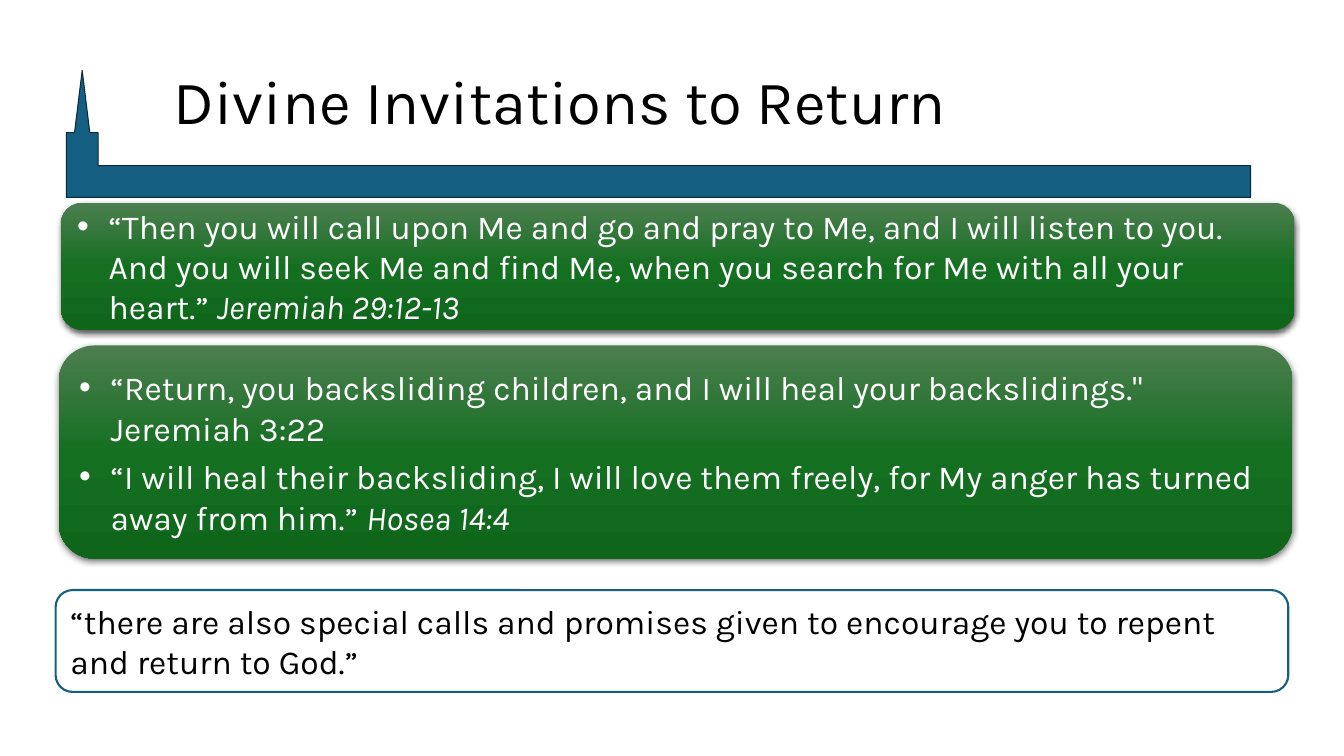
from lxml import etree
from pptx import Presentation
from pptx import util as u
from pptx.dml.color import RGBColor
from pptx.enum import shapes, text
from pptx.oxml import ns

PX = 9525
FONT = "Karla"
BLACK = RGBColor(0x00, 0x00, 0x00)
WHITE = RGBColor(0xFF, 0xFF, 0xFF)
BLUE = RGBColor(0x15, 0x60, 0x82)
DARK_BLUE = RGBColor(0x09, 0x2A, 0x39)
GREENS = {
    0: RGBColor(0x4D, 0x7E, 0x50),
    50: RGBColor(0x15, 0x6F, 0x21),
    100: RGBColor(0x0F, 0x66, 0x1B),
}
HANGING = 30

CARD_VERSES = [
    [("“Then you will call upon Me and go and pray to Me, and I will listen to you. "
      "And you will seek Me and find Me, when you search for Me with all your heart.” ",
      "Jeremiah 29:12-13")],
    [("“Return, you backsliding children, and I will heal your backslidings.\" Jeremiah 3:22", ""),
     ("“I will heal their backsliding, I will love them freely, for My anger has turned "
      "away from him.” ", "Hosea 14:4")],
]
CARD_BOXES = [(58, 193, 1175, 121), (56, 329, 1175, 203)]
CLOSING = ("“there are also special calls and promises given to encourage you "
           "to repent and return to God.”")


def px(*lengths):
    return [u.Emu(length * PX) for length in lengths]


def add_element(parent, tag, **attributes):
    element = etree.SubElement(parent, ns.qn(tag))
    for key, value in attributes.items():
        element.set(key, str(value))
    return element


def set_font(font, size, color):
    font.name = FONT
    font.size = u.Pt(size)
    font.color.rgb = color


def add_panel(slide, kind, box):
    panel = slide.shapes.add_shape(kind, *px(*box))
    panel.shadow.inherit = False
    panel.text_frame.word_wrap = True
    panel.text_frame.vertical_anchor = text.MSO_ANCHOR.MIDDLE
    return panel


def add_header(slide, box):
    left, top, width, height = box
    steeple = add_panel(slide, shapes.MSO_SHAPE.BENT_UP_ARROW, box)
    for index, value in enumerate((0.25, 0.06, 0.49)):
        steeple.adjustments[index] = value
    steeple.fill.solid()
    steeple.fill.fore_color.rgb = BLUE
    steeple.line.color.rgb = DARK_BLUE
    steeple.line.width = u.Pt(0.75)
    steeple.element.spPr.find(ns.qn("a:xfrm")).set("flipH", "1")

    heading = slide.shapes.add_textbox(*px(left + 85, top - 28, width - 83, height))
    heading.text_frame.word_wrap = True
    heading.text_frame.vertical_anchor = text.MSO_ANCHOR.MIDDLE
    heading.text_frame.text = "Divine Invitations to Return"
    title = heading.text_frame.paragraphs[0]
    title.line_spacing = 0.9
    set_font(title.runs[0].font, 44, BLACK)


def style_card(card):
    card.line.fill.background()
    properties = card.element.spPr
    gradient = etree.Element(ns.qn("a:gradFill"), rotWithShape="1")
    stops = add_element(gradient, "a:gsLst")
    for percent, color in GREENS.items():
        stop = add_element(stops, "a:gs", pos=percent * 1000)
        add_element(stop, "a:srgbClr", val=color)
    add_element(gradient, "a:lin", ang=90 * 60000, scaled=0)
    properties.find(ns.qn("a:ln")).addprevious(gradient)

    shadow = add_element(properties.find(ns.qn("a:effectLst")), "a:outerShdw",
                         blurRad=u.Pt(4.5), dist=u.Pt(1.5), dir=90 * 60000,
                         algn="ctr", rotWithShape=0)
    shade = add_element(shadow, "a:srgbClr", val=BLACK)
    add_element(shade, "a:alpha", val=63000)


def add_verse_card(slide, box, verses):
    card = add_panel(slide, shapes.MSO_SHAPE.ROUNDED_RECTANGLE, box)
    style_card(card)
    frame = card.text_frame
    for index, (quote, reference) in enumerate(verses):
        verse = frame.add_paragraph() if index else frame.paragraphs[0]
        verse.alignment = text.PP_ALIGN.LEFT
        if index:
            verse.space_before = u.Pt(6)
        layout = verse._p.get_or_add_pPr()
        layout.set("marL", str(HANGING * PX))
        layout.set("indent", str(-HANGING * PX))
        add_element(layout, "a:buFont", typeface="Arial")
        add_element(layout, "a:buChar", char="•")
        verse.text = quote
        if reference:
            citation = verse.add_run()
            citation.text = reference
            citation.font.italic = True
        for run in verse.runs:
            set_font(run.font, 24, WHITE)


def add_closing(slide, box):
    closing = add_panel(slide, shapes.MSO_SHAPE.ROUNDED_RECTANGLE, box)
    closing.fill.solid()
    closing.fill.fore_color.rgb = WHITE
    closing.line.color.rgb = BLUE
    closing.line.width = u.Pt(1.5)
    closing.text_frame.text = CLOSING
    call = closing.text_frame.paragraphs[0]
    call.alignment = text.PP_ALIGN.LEFT
    set_font(call.runs[0].font, 24, BLACK)


def main():
    deck = Presentation()
    deck.slide_width, deck.slide_height = px(1280, 720)
    slide = deck.slides.add_slide(deck.slide_layouts[6])
    add_header(slide, (71, 67, 1120, 121))
    for box, verses in zip(CARD_BOXES, CARD_VERSES):
        add_verse_card(slide, box, verses)
    add_closing(slide, (53, 562, 1174, 97))
    deck.save("out.pptx")


if __name__ == "__main__":
    main()
